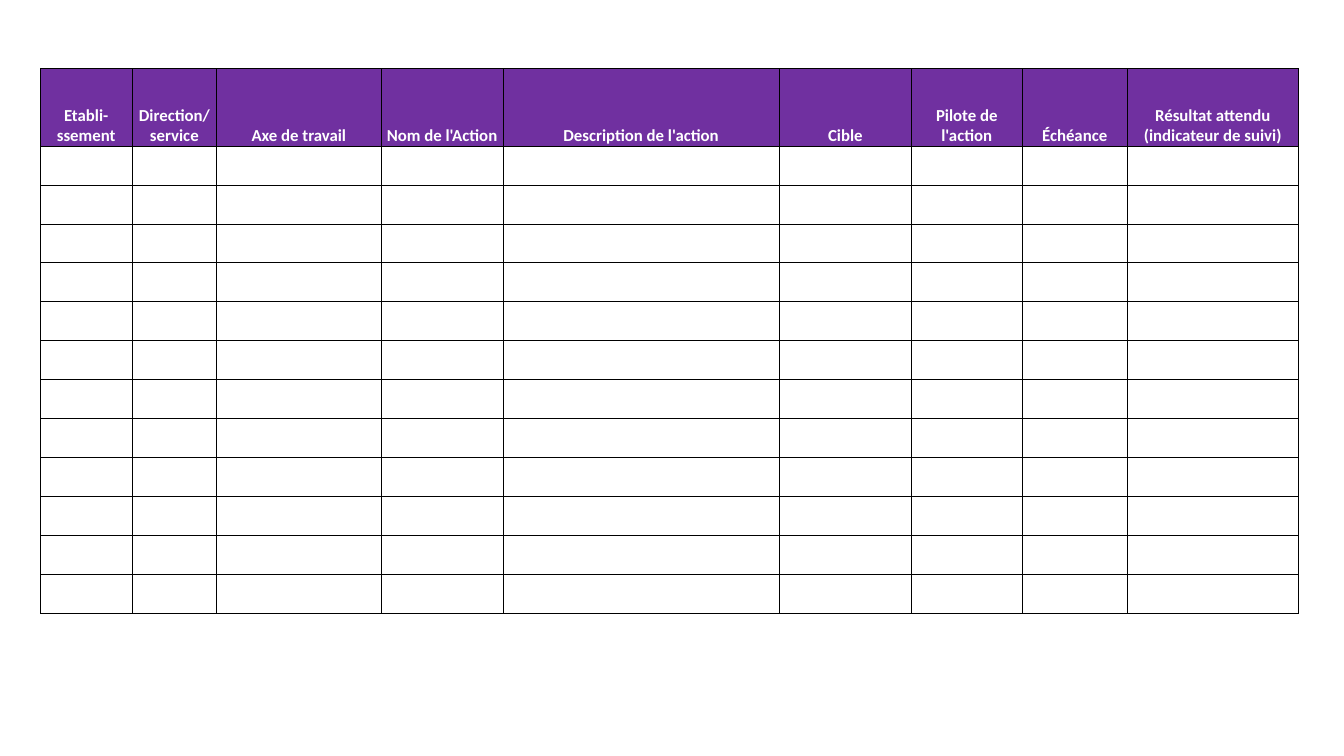
"""Build an action plan slide: a purple header row above empty rows to fill in."""
from dataclasses import dataclass

import pptx
import pptx.dml.color
import pptx.enum.text
import pptx.oxml
import pptx.oxml.ns
import pptx.table
import pptx.util
from pptx.util import Inches

PURPLE = "7030A0"
WHITE = "FFFFFF"
BLACK = "000000"
ACTION_ROWS = 12
PLAN_HEIGHT = 5.4
HEADER_HEIGHT = 0.77
ROW_HEIGHT = (PLAN_HEIGHT - HEADER_HEIGHT) / ACTION_ROWS


@dataclass(frozen=True)
class Column:
    """A heading and its column width in inches."""

    heading: str
    width: float


COLUMNS = [
    Column("Etabli-ssement", 0.91),
    Column("Direction/ service", 0.84),
    Column("Axe de travail", 1.63),
    Column("Nom de l'Action", 1.21),
    Column("Description de l'action", 2.74),
    Column("Cible", 1.31),
    Column("Pilote de l'action", 1.1),
    Column("Échéance", 1.04),
    Column("Résultat attendu (indicateur de suivi)", 1.7),
]


def color(value: str) -> pptx.dml.color.RGBColor:
    """Turn a hex string into a colour."""
    return pptx.dml.color.RGBColor.from_string(value)


def frame_cell(cell: pptx.table._Cell) -> None:
    """Remove the cell's margins and draw a thin line on its four sides."""
    cell.margin_left = cell.margin_right = cell.margin_top = cell.margin_bottom = 0
    properties = cell._tc.get_or_add_tcPr()
    for position, side in enumerate(("lnL", "lnR", "lnT", "lnB")):
        border = pptx.oxml.parse_xml(
            f'<a:{side} {pptx.oxml.ns.nsdecls("a")} w="{pptx.util.Pt(0.5)}">'
            f'<a:solidFill><a:srgbClr val="{BLACK}"/></a:solidFill></a:{side}>'
        )
        properties.insert(position, border)


def write_heading(cell: pptx.table._Cell, heading: str) -> None:
    """Fill a header cell and write its heading at the bottom centre."""
    cell.fill.solid()
    cell.fill.fore_color.rgb = color(PURPLE)
    cell.vertical_anchor = pptx.enum.text.MSO_ANCHOR.BOTTOM
    paragraph = cell.text_frame.paragraphs[0]
    paragraph.alignment = pptx.enum.text.PP_ALIGN.CENTER
    run = paragraph.add_run()
    run.text = heading
    run.font.name = "Calibri"
    run.font.size = pptx.util.Pt(12)
    run.font.bold = True
    run.font.color.rgb = color(WHITE)


def main() -> None:
    """Create the presentation and its action plan."""
    presentation = pptx.Presentation()
    presentation.slide_width = Inches(13.33)
    presentation.slide_height = Inches(7.5)
    slide = presentation.slides.add_slide(presentation.slide_layouts[6])

    plan = slide.shapes.add_table(
        ACTION_ROWS + 1,
        len(COLUMNS),
        Inches(0.4),
        Inches(0.68),
        Inches(sum(column.width for column in COLUMNS)),
        Inches(PLAN_HEIGHT),
    ).table
    plan.horz_banding = False
    for row in plan.rows:
        row.height = Inches(ROW_HEIGHT)
    plan.rows[0].height = Inches(HEADER_HEIGHT)

    for cell in plan.iter_cells():
        cell.fill.background()
        frame_cell(cell)
    for index, column in enumerate(COLUMNS):
        plan.columns[index].width = Inches(column.width)
        write_heading(plan.cell(0, index), column.heading)

    presentation.save("out.pptx")


if __name__ == "__main__":
    main()
